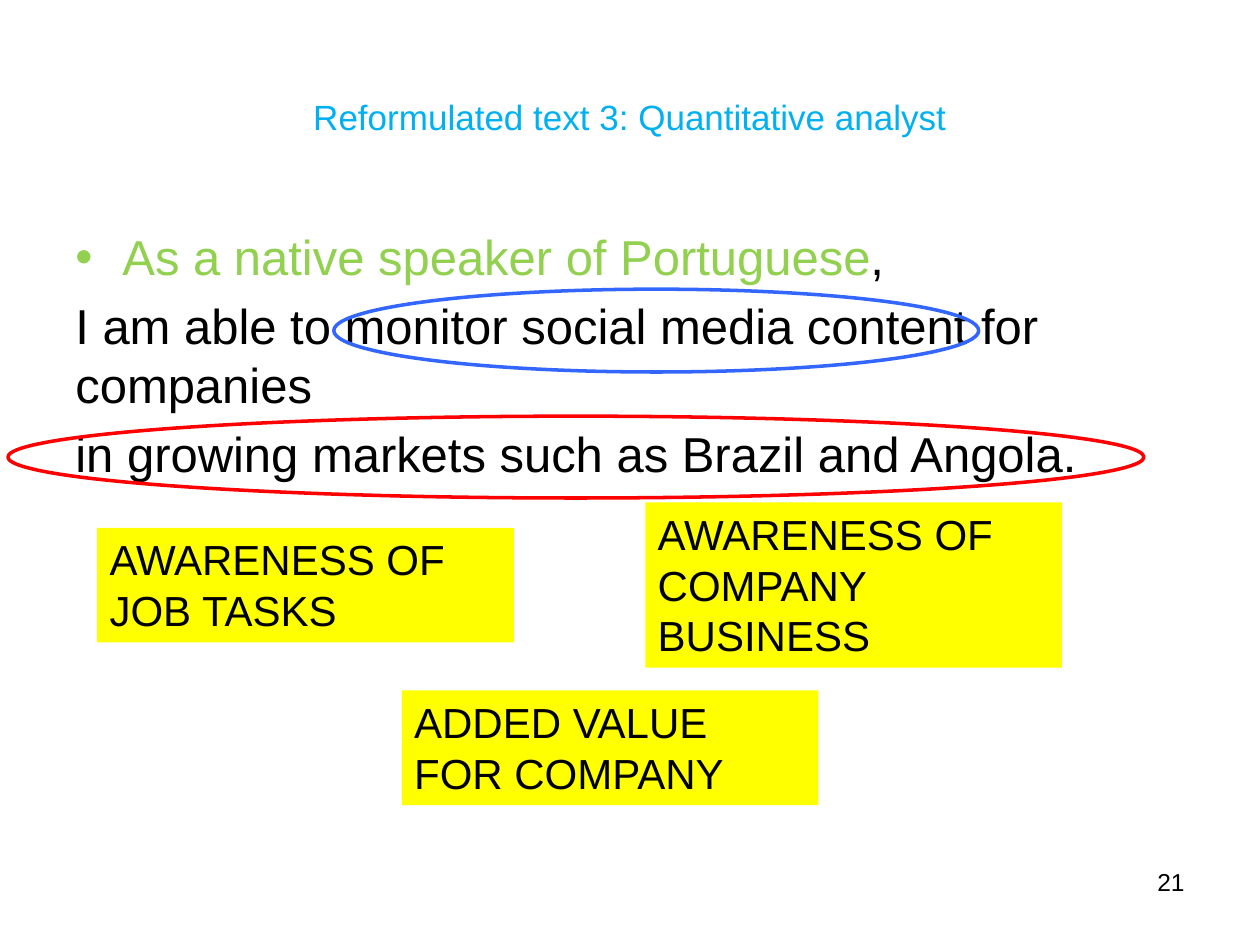
from lxml import etree
from pptx import Presentation
from pptx.dml.color import RGBColor
from pptx.enum import shapes, text
from pptx.oxml.ns import qn
from pptx.util import Cm, Pt

BLACK = RGBColor(0, 0, 0)
CYAN = RGBColor(0x00, 0xB0, 0xF0)
GREEN = RGBColor(0x92, 0xD0, 0x50)
YELLOW = RGBColor(0xFF, 0xFF, 0x00)
RED = RGBColor(0xFF, 0x00, 0x00)
BLUE = RGBColor(0x33, 0x66, 0xFF)


def style(run, size, color=BLACK):
    run.font.name = "Arial"
    run.font.size = Pt(size)
    run.font.color.rgb = color


def add_text(slide, box, words, size, color=BLACK, align=text.PP_ALIGN.LEFT):
    """Add a wrapped text box with one paragraph per line of words."""
    label = slide.shapes.add_textbox(*map(Cm, box))
    frame = label.text_frame
    frame.word_wrap = True
    frame.text = words
    for para in frame.paragraphs:
        para.alignment = align
        for run in para.runs:
            style(run, size, color)
    return label


def add_bullet(para, indent):
    props = para._p.get_or_add_pPr()
    props.set("marL", str(indent))
    props.set("indent", str(-indent))
    etree.SubElement(props, qn("a:buFont"), typeface="Arial")
    etree.SubElement(props, qn("a:buChar"), char="•")


def add_body(slide):
    lines = ("\nI am able to monitor social media content for companies"
             "\nin growing markets such as Brazil and Angola.")
    body = add_text(slide, (1.27, 4.45, 22.86, 12.57), lines, 28)
    paras = body.text_frame.paragraphs
    for para in paras:
        para.space_before = Pt(5.6)
    for words, color in (("As a native speaker of Portuguese", GREEN), (",", BLACK)):
        run = paras[0].add_run()
        run.text = words
        style(run, 28, color)
    add_bullet(paras[0], Cm(0.95))


def add_note(slide, left, top, height, words):
    note = add_text(slide, (left, top, 8.4, height), words, 24)
    note.text_frame.auto_size = text.MSO_AUTO_SIZE.SHAPE_TO_FIT_TEXT
    note.fill.solid()
    note.fill.fore_color.rgb = YELLOW


def add_ring(slide, box, color):
    """Circle a phrase, with the outline kept between the text lines."""
    ring = slide.shapes.add_shape(shapes.MSO_SHAPE.OVAL, *map(Cm, box))
    ring.shadow.inherit = False
    ring.fill.background()
    ring.line.color.rgb = color
    ring.line.width = Pt(2)


def main():
    deck = Presentation()
    deck.slide_width, deck.slide_height = Cm(25.4), Cm(19.05)
    slide = deck.slides.add_slide(deck.slide_layouts[6])

    title = add_text(slide, (1.27, 0.76, 22.86, 3.18),
                     "Reformulated text 3: Quantitative analyst",
                     20, CYAN, text.PP_ALIGN.CENTER)
    title.text_frame.vertical_anchor = text.MSO_ANCHOR.MIDDLE
    add_body(slide)

    add_note(slide, 13.01, 10.13, 3.33, "AWARENESS OF COMPANY BUSINESS")
    add_ring(slide, (0.16, 8.39, 22.9, 1.65), RED)
    add_ring(slide, (6.73, 5.83, 13, 1.67), BLUE)
    add_note(slide, 1.96, 10.64, 2.31, "AWARENESS OF JOB TASKS")
    add_note(slide, 8.1, 13.92, 2.31, "ADDED VALUE FOR COMPANY")

    add_text(slide, (18.21, 17.35, 5.92, 1.32), "21", 14,
             align=text.PP_ALIGN.RIGHT)
    deck.save("out.pptx")


if __name__ == "__main__":
    main()
